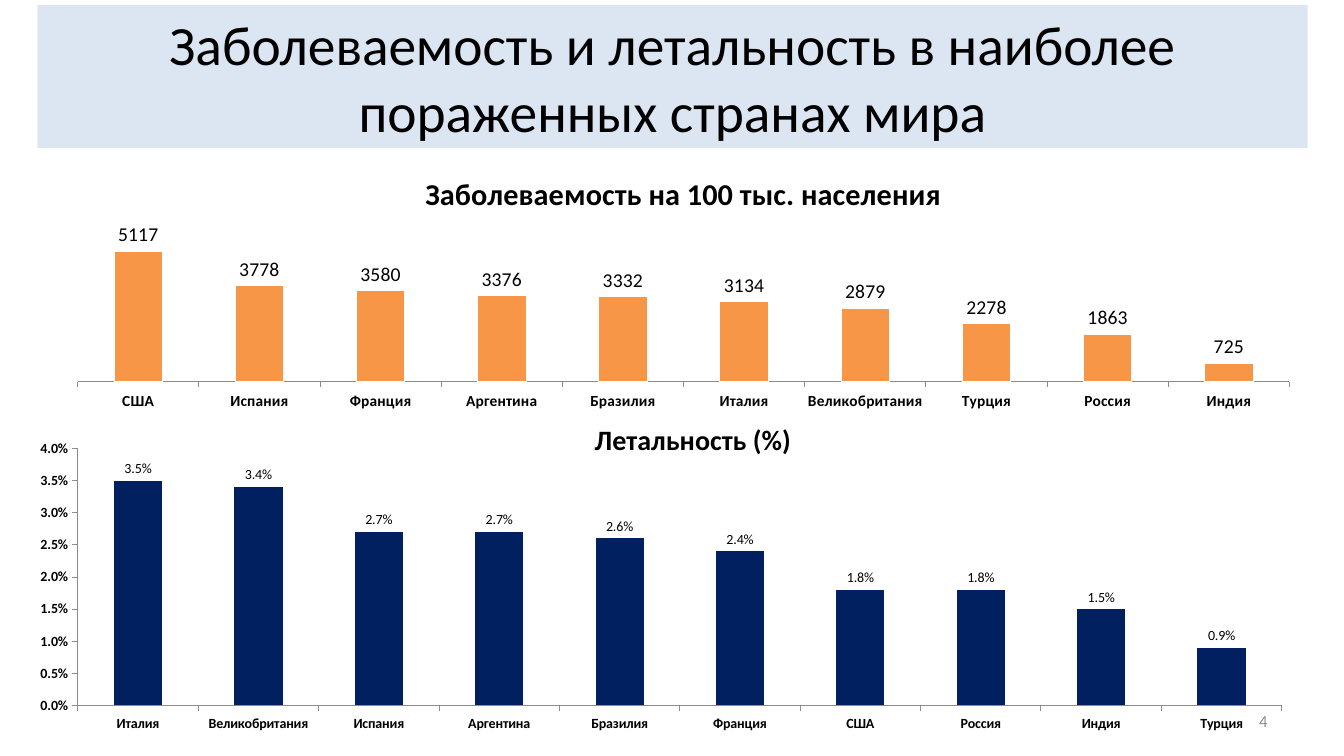
import pptx
import pptx.util
import pptx.chart.data
import pptx.dml.color
import pptx.enum.chart
import pptx.enum.text
import pptx.oxml
import pptx.oxml.ns

Inches = pptx.util.Inches
Pt = pptx.util.Pt
RGBColor = pptx.dml.color.RGBColor
Align = pptx.enum.text.PP_ALIGN
Anchor = pptx.enum.text.MSO_ANCHOR
Tick = pptx.enum.chart.XL_TICK_MARK

FONT = "Calibri"
BLACK = RGBColor(0x00, 0x00, 0x00)
WHITE = RGBColor(0xFF, 0xFF, 0xFF)
PALE = RGBColor(0xDC, 0xE6, 0xF2)
GRAY = RGBColor(0x8C, 0x8C, 0x8C)
ORANGE = RGBColor(0xF7, 0x96, 0x46)
NAVY = RGBColor(0x00, 0x20, 0x60)

CASES = {
    "США": 5117, "Испания": 3778, "Франция": 3580, "Аргентина": 3376,
    "Бразилия": 3332, "Италия": 3134, "Великобритания": 2879,
    "Турция": 2278, "Россия": 1863, "Индия": 725,
}
DEATHS = {
    "Италия": 0.035, "Великобритания": 0.034, "Испания": 0.027,
    "Аргентина": 0.027, "Бразилия": 0.026, "Франция": 0.024,
    "США": 0.018, "Россия": 0.018, "Индия": 0.015, "Турция": 0.009,
}


def style(font, size, color=BLACK, bold=False):
    font.name = FONT
    font.size = Pt(size)
    font.bold = bold
    font.color.rgb = color


def write(frame, text, size, color=BLACK, bold=False, align=Align.LEFT,
          anchor=Anchor.TOP, wrap=True):
    frame.word_wrap = wrap
    frame.vertical_anchor = anchor
    para = frame.paragraphs[0]
    para.alignment = align
    run = para.add_run()
    run.text = text
    style(run.font, size, color, bold)


def place(shape, box):
    shape.left, shape.top, shape.width, shape.height = map(Inches, box)


def add_head(slide, text, box):
    head = slide.shapes.title
    place(head, box)
    head.fill.solid()
    head.fill.fore_color.rgb = PALE
    head.text_frame.auto_size = pptx.enum.text.MSO_AUTO_SIZE.NONE
    write(head.text_frame, text, 39.6, align=Align.CENTER,
          anchor=Anchor.MIDDLE)


def add_text(slide, text, box, size, **form):
    label = slide.shapes.add_textbox(*map(Inches, box))
    write(label.text_frame, text, size, **form)


def set_plot(chart, plot):
    """Fix the inner plot area as x, y, w, h fractions of the chart."""
    area = chart.element.find(".//" + pptx.oxml.ns.qn("c:plotArea"))
    for old in area.findall(pptx.oxml.ns.qn("c:layout")):
        area.remove(old)
    modes = '<c:xMode val="edge"/><c:yMode val="edge"/>'
    sizes = "".join(f'<c:{key} val="{val}"/>' for key, val in zip("xywh", plot))
    area.insert(0, pptx.oxml.parse_xml(
        f'<c:layout {pptx.oxml.ns.nsdecls("c")}><c:manualLayout>'
        f'<c:layoutTarget val="inner"/>{modes}{sizes}'
        '</c:manualLayout></c:layout>'))


def set_axis(axis, size):
    axis.has_major_gridlines = False
    axis.major_tick_mark = Tick.OUTSIDE
    axis.minor_tick_mark = Tick.NONE
    axis.format.line.color.rgb = GRAY
    axis.format.line.width = Pt(0.75)
    style(axis.tick_labels.font, size, bold=True)


def add_bars(slide, rows, box, plot, color, form, top, step, size, note,
             title=None, edge=None):
    data = pptx.chart.data.CategoryChartData(number_format=form)
    data.categories = list(rows)
    data.add_series("Series 1", list(rows.values()))
    kind = pptx.enum.chart.XL_CHART_TYPE.COLUMN_CLUSTERED
    chart = slide.shapes.add_chart(kind, *map(Inches, box), data).chart
    style(chart.font, size)
    chart.has_legend = False
    chart.has_title = title is not None
    if title:
        write_title = chart.chart_title.text_frame.paragraphs[0].add_run()
        write_title.text = title
        style(write_title.font, 21.6, bold=True)
    set_plot(chart, plot)

    set_axis(chart.category_axis, size)
    scale = chart.value_axis
    set_axis(scale, size)
    scale.minimum_scale, scale.maximum_scale = 0, top
    scale.major_unit = step
    scale.tick_labels.number_format = form
    scale.tick_labels.number_format_is_linked = False

    bars = chart.plots[0]
    bars.gap_width = 150
    bars.vary_by_categories = False
    look = bars.series[0].format
    look.fill.solid()
    look.fill.fore_color.rgb = color
    if edge:
        look.line.color.rgb = edge
    else:
        look.line.fill.background()
    bars.has_data_labels = True
    labels = bars.data_labels
    labels.show_value = True
    labels.number_format = form
    labels.number_format_is_linked = False
    labels.position = pptx.enum.chart.XL_LABEL_POSITION.OUTSIDE_END
    style(labels.font, note)
    return chart


def main():
    deck = pptx.Presentation()
    deck.slide_width, deck.slide_height = Inches(13.33), Inches(7.5)
    slide = deck.slides.add_slide(deck.slide_layouts[5])

    add_head(slide, "Заболеваемость и летальность в наиболее "
             "пораженных странах мира", (0.37, 0.05, 12.6, 1.42))
    add_text(slide, "Летальность (%)", (5.8, 4.14, 2.16, 0.44), 20,
             bold=True, wrap=False)
    add_text(slide, "4", (9.56, 6.95, 3.11, 0.4), 12, color=GRAY,
             align=Align.RIGHT, anchor=Anchor.MIDDLE)

    cases = add_bars(slide, CASES, (0.52, 1.55, 12.52, 2.57),
                     (0.02, 0.28, 0.96, 0.59), ORANGE, "0", 6000, 1000,
                     11, 14, title="Заболеваемость на 100 тыс. населения",
                     edge=WHITE)
    cases.value_axis.visible = False
    add_bars(slide, DEATHS, (0.13, 4.3, 12.84, 3),
             (0.05, 0.05, 0.93, 0.85), NAVY, "0.0%", 0.04, 0.005, 10, 10)

    deck.save("out.pptx")


if __name__ == "__main__":
    main()
